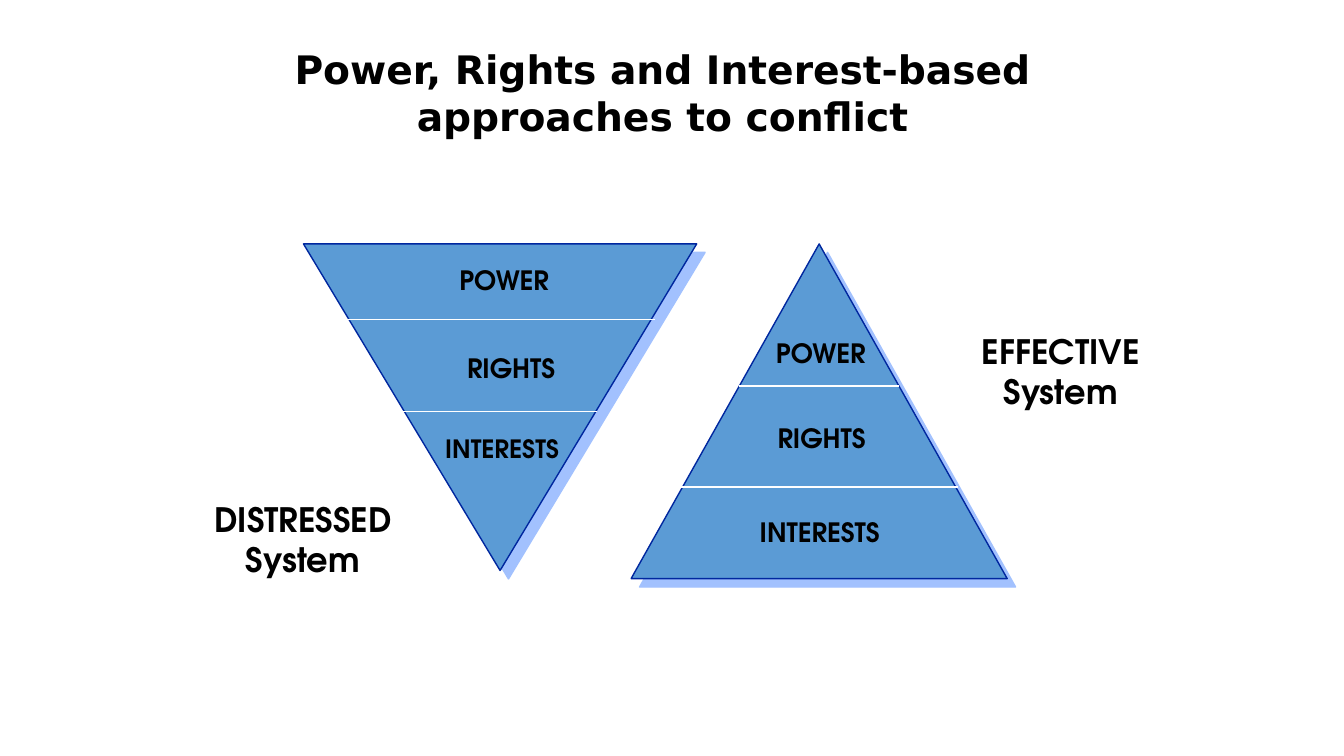
from lxml import etree
from pptx import Presentation
from pptx.dml.color import RGBColor
from pptx.enum import shapes, text
from pptx.oxml import parse_xml
from pptx.oxml.ns import nsdecls, qn
from pptx.util import Inches, Pt

BLACK = RGBColor(0x00, 0x00, 0x00)
WHITE = RGBColor(0xFF, 0xFF, 0xFF)
BLUE = RGBColor(0x5B, 0x9B, 0xD5)
NAVY = RGBColor(0x00, 0x27, 0x9F)
SHADOW = "A2C1FE"
TITLE_FONT, LABEL_FONT = "DejaVu Sans", "TeX Gyre Adventor"

# Content: lengths in inches
title = "Power, Rights and Interest-based approaches to conflict"
title_box = (2.07, 0.4, 9, 1.04)
pyramids = [
    {
        "box": (6.26, 2.42, 3.73, 3.32), "rotation": 0,
        "system": ("EFFECTIVE\nSystem", (9.63, 3.23, 1.78, 0.91)),
        # level, centre x, top, point size
        "levels": [("POWER", 8.14, 3.29, 19), ("RIGHTS", 8.15, 4.14, 19),
                   ("INTERESTS", 8.13, 5.07, 19)],
        # left, right, y
        "dividers": [(7.33, 8.92, 3.83), (6.75, 9.5, 4.83)],
    },
    {
        "box": (3.01, 2.42, 3.9, 3.24), "rotation": 180,
        "system": ("DISTRESSED\nSystem", (1.97, 4.9, 2.07, 0.91)),
        "levels": [("POWER", 5.0, 2.57, 19), ("RIGHTS", 5.07, 3.44, 19),
                   ("INTERESTS", 4.98, 4.25, 18)],
        "dividers": [(3.42, 6.5, 3.17), (4, 5.92, 4.08)],
    },
]
LEVEL_WIDTH, LEVEL_HEIGHT = 1.5, 0.42

prs = Presentation()
prs.slide_width, prs.slide_height = Inches(13.33), Inches(7.5)
slide = prs.slides.add_slide(prs.slide_layouts[6])


def add_label(words, box, size, font=LABEL_FONT, wrap=False):
    label = slide.shapes.add_textbox(*map(Inches, box))
    frame = label.text_frame
    frame.text = words
    frame.word_wrap = wrap
    frame.auto_size = text.MSO_AUTO_SIZE.SHAPE_TO_FIT_TEXT
    for paragraph in frame.paragraphs:
        paragraph.alignment = text.PP_ALIGN.CENTER
        for run in paragraph.runs:
            run.font.name = font
            run.font.size = Pt(size)
            run.font.bold = True
            run.font.color.rgb = BLACK


def add_pyramid(box, rotation):
    pyramid = slide.shapes.add_shape(
        shapes.MSO_SHAPE.ISOSCELES_TRIANGLE, *map(Inches, box))
    pyramid.rotation = rotation
    pyramid.fill.solid()
    pyramid.fill.fore_color.rgb = BLUE
    pyramid.line.color.rgb = NAVY
    pyramid.line.width = Pt(1)
    # Hard shadow to the lower right, whatever the rotation
    pyramid.shadow.inherit = False
    effects = pyramid._element.spPr.find(qn("a:effectLst"))
    effects.append(parse_xml(
        f'<a:outerShdw {nsdecls("a")} dist="{Pt(8.5)}" dir="2700000" '
        f'algn="ctr" rotWithShape="0"><a:srgbClr val="{SHADOW}"/></a:outerShdw>'))


def add_divider(left, right, y):
    divider = slide.shapes.add_connector(
        shapes.MSO_CONNECTOR.STRAIGHT,
        Inches(left), Inches(y), Inches(right), Inches(y))
    divider.line.color.rgb = WHITE
    divider.line.width = Pt(1)
    etree.SubElement(divider._element.spPr, qn("a:effectLst"))


# Title
add_label(title, title_box, 28, TITLE_FONT, wrap=True)

# Pyramids with their dividers and labels
for system in pyramids:
    add_pyramid(system["box"], system["rotation"])
    for ends in system["dividers"]:
        add_divider(*ends)
    add_label(*system["system"], 24)
    for level, center, top, size in system["levels"]:
        add_label(level, (center - LEVEL_WIDTH / 2, top, LEVEL_WIDTH, LEVEL_HEIGHT), size)

prs.save("out.pptx")
